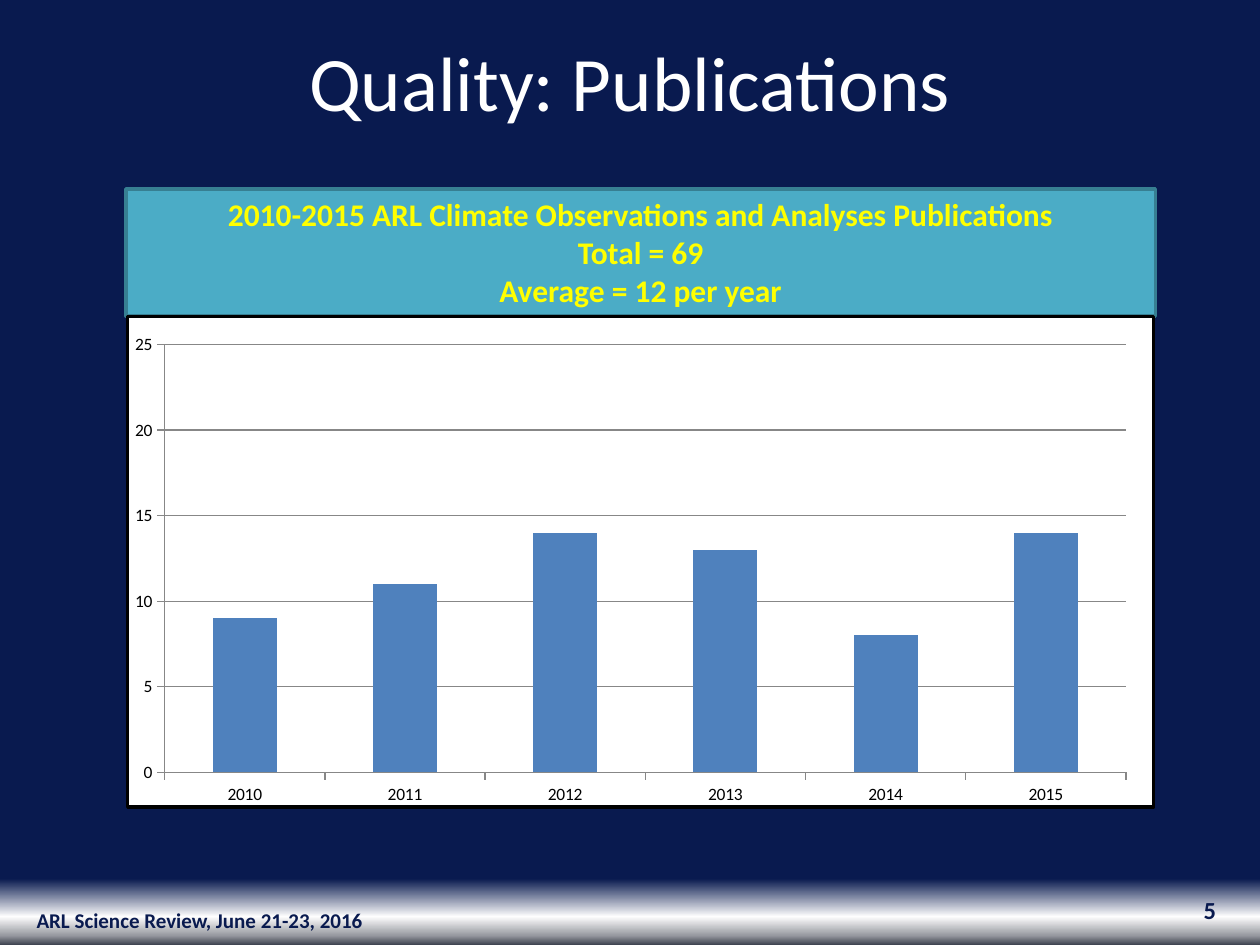
from dataclasses import dataclass

from lxml.etree import SubElement
from pptx import Presentation
from pptx.chart.data import CategoryChartData
from pptx.dml.color import RGBColor
from pptx.enum.chart import XL_CHART_TYPE, XL_TICK_MARK
from pptx.enum.shapes import MSO_SHAPE
from pptx.enum.text import MSO_ANCHOR, MSO_AUTO_SIZE, PP_ALIGN
from pptx.oxml import parse_xml
from pptx.oxml.ns import nsdecls, qn
from pptx.util import Inches, Pt

COLUMNS, ROWS = 100, 75


@dataclass(frozen=True)
class Theme:
    font: str = "Calibri"
    navy: str = "091A4F"
    white: str = "FFFFFF"
    black: str = "000000"
    yellow: str = "FFFF00"
    teal: str = "4BACC6"
    teal_edge: str = "377F92"
    bar: str = "4F81BD"
    axis: str = "878787"
    backdrop: tuple = ((0, "091A4F"), (93, "091A4F"), (97, "FEFEFE"),
                       (99, "9799A0"), (100, "3C414E"))
    title_size: int = 44
    band_size: int = 18
    page_number_size: int = 14
    footer_size: int = 12
    chart_size: int = 10
    edge_width: float = 2
    axis_width: float = 0.75


@dataclass(frozen=True)
class Area:
    column: float
    row: float
    columns: float
    rows: float


@dataclass(frozen=True)
class TextStyle:
    size: int
    color: str
    bold: bool = True
    align: PP_ALIGN = PP_ALIGN.CENTER
    anchor: MSO_ANCHOR = MSO_ANCHOR.MIDDLE


THEME = Theme()
TITLE = Area(0, 2.2, COLUMNS, 8.4)
BAND = Area(10, 15, 81.7, 10.1)
CHART = Area(10, 25, 81.7, 39.2)
FOOTER = Area(0, 71, 31.7, 4)
PAGE_NUMBER = Area(74.2, 70.2, 23.3, 4)
PLOT = {"x": 0.036, "y": 0.057, "w": 0.937, "h": 0.872}
PUBLICATIONS = {"2010": 9, "2011": 11, "2012": 14, "2013": 13, "2014": 8, "2015": 14}


def frame(deck, area: Area) -> tuple:
    column, row = deck.slide_width / COLUMNS, deck.slide_height / ROWS
    return (round(area.column * column), round(area.row * row),
            round(area.columns * column), round(area.rows * row))


def write(box, lines: list[str], style: TextStyle) -> None:
    text = box.text_frame
    text.word_wrap = True
    text.auto_size = MSO_AUTO_SIZE.NONE
    text.vertical_anchor = style.anchor
    for index, line in enumerate(lines):
        para = text.paragraphs[0] if index == 0 else text.add_paragraph()
        para.alignment = style.align
        span = para.add_run()
        span.text = line
        span.font.name = THEME.font
        span.font.size = Pt(style.size)
        span.font.bold = style.bold
        span.font.color.rgb = RGBColor.from_string(style.color)


def paint_background(page) -> None:
    fill = page.background.fill
    fill.gradient()
    fill.gradient_angle = 270
    stops = next(page.element.iter(qn("a:gsLst")))
    for stop in list(stops):
        stops.remove(stop)
    for percent, color in THEME.backdrop:
        stop = SubElement(stops, qn("a:gs"), pos=str(percent * 1000))
        SubElement(stop, qn("a:srgbClr"), val=color)


def add_title(deck, page, wording: str) -> None:
    title = page.shapes.title
    title.left, title.top, title.width, title.height = frame(deck, TITLE)
    write(title, [wording], TextStyle(THEME.title_size, THEME.white, bold=False,
                                      anchor=MSO_ANCHOR.TOP))


def add_label(deck, page, area: Area, wording: str, style: TextStyle) -> None:
    write(page.shapes.add_textbox(*frame(deck, area)), [wording], style)


def add_band(deck, page, lines: list[str]) -> None:
    band = page.shapes.add_shape(MSO_SHAPE.RECTANGLE, *frame(deck, BAND))
    band.shadow.inherit = False
    band.fill.solid()
    band.fill.fore_color.rgb = RGBColor.from_string(THEME.teal)
    band.line.color.rgb = RGBColor.from_string(THEME.teal_edge)
    band.line.width = Pt(THEME.edge_width)
    write(band, lines, TextStyle(THEME.band_size, THEME.yellow, anchor=MSO_ANCHOR.TOP))


def draw_line(line) -> None:
    line.color.rgb = RGBColor.from_string(THEME.axis)
    line.width = Pt(THEME.axis_width)


def frame_chart(chart) -> None:
    space = chart.element
    space.find(qn("c:txPr")).addprevious(parse_xml(
        f'<c:spPr {nsdecls("c", "a")}><a:solidFill><a:srgbClr val="{THEME.white}"/></a:solidFill>'
        f'<a:ln w="{Pt(THEME.edge_width)}"><a:solidFill><a:srgbClr val="{THEME.black}"/>'
        f'</a:solidFill></a:ln></c:spPr>'))
    plot_area = next(space.iter(qn("c:plotArea")))
    for layout in plot_area.findall(qn("c:layout")):
        plot_area.remove(layout)
    modes = '<c:xMode val="edge"/><c:yMode val="edge"/>'
    shares = "".join(f'<c:{key} val="{share}"/>' for key, share in PLOT.items())
    plot_area.insert(0, parse_xml(
        f'<c:layout {nsdecls("c")}><c:manualLayout><c:layoutTarget val="inner"/>'
        f'{modes}{shares}</c:manualLayout></c:layout>'))


def add_publication_chart(deck, page) -> None:
    data = CategoryChartData()
    data.categories = list(PUBLICATIONS)
    data.add_series("Series 1", list(PUBLICATIONS.values()))
    chart = page.shapes.add_chart(
        XL_CHART_TYPE.COLUMN_CLUSTERED, *frame(deck, CHART), data).chart
    chart.has_title = False
    chart.has_legend = False
    chart.font.name = THEME.font
    chart.font.size = Pt(THEME.chart_size)
    chart.font.color.rgb = RGBColor.from_string(THEME.black)
    for axis in (chart.category_axis, chart.value_axis):
        axis.major_tick_mark = XL_TICK_MARK.OUTSIDE
        axis.minor_tick_mark = XL_TICK_MARK.NONE
        draw_line(axis.format.line)
    values = chart.value_axis
    values.minimum_scale, values.maximum_scale, values.major_unit = 0, 25, 5
    values.has_major_gridlines = True
    draw_line(values.major_gridlines.format.line)
    plot = chart.plots[0]
    plot.gap_width = 150
    plot.vary_by_categories = False
    fill = plot.series[0].format.fill
    fill.solid()
    fill.fore_color.rgb = RGBColor.from_string(THEME.bar)
    frame_chart(chart)


def main() -> None:
    deck = Presentation()
    deck.slide_width, deck.slide_height = Inches(10), Inches(7.5)
    page = deck.slides.add_slide(deck.slide_layouts[5])
    paint_background(page)
    add_label(deck, page, FOOTER, "ARL Science Review, June 21-23, 2016",
              TextStyle(THEME.footer_size, THEME.navy))
    add_label(deck, page, PAGE_NUMBER, "5",
              TextStyle(THEME.page_number_size, THEME.navy, align=PP_ALIGN.RIGHT))
    add_band(deck, page, ["2010-2015 ARL Climate Observations and Analyses Publications",
                          "Total = 69", "Average = 12 per year"])
    add_publication_chart(deck, page)
    add_title(deck, page, "Quality: Publications")
    deck.save("out.pptx")


if __name__ == "__main__":
    main()
